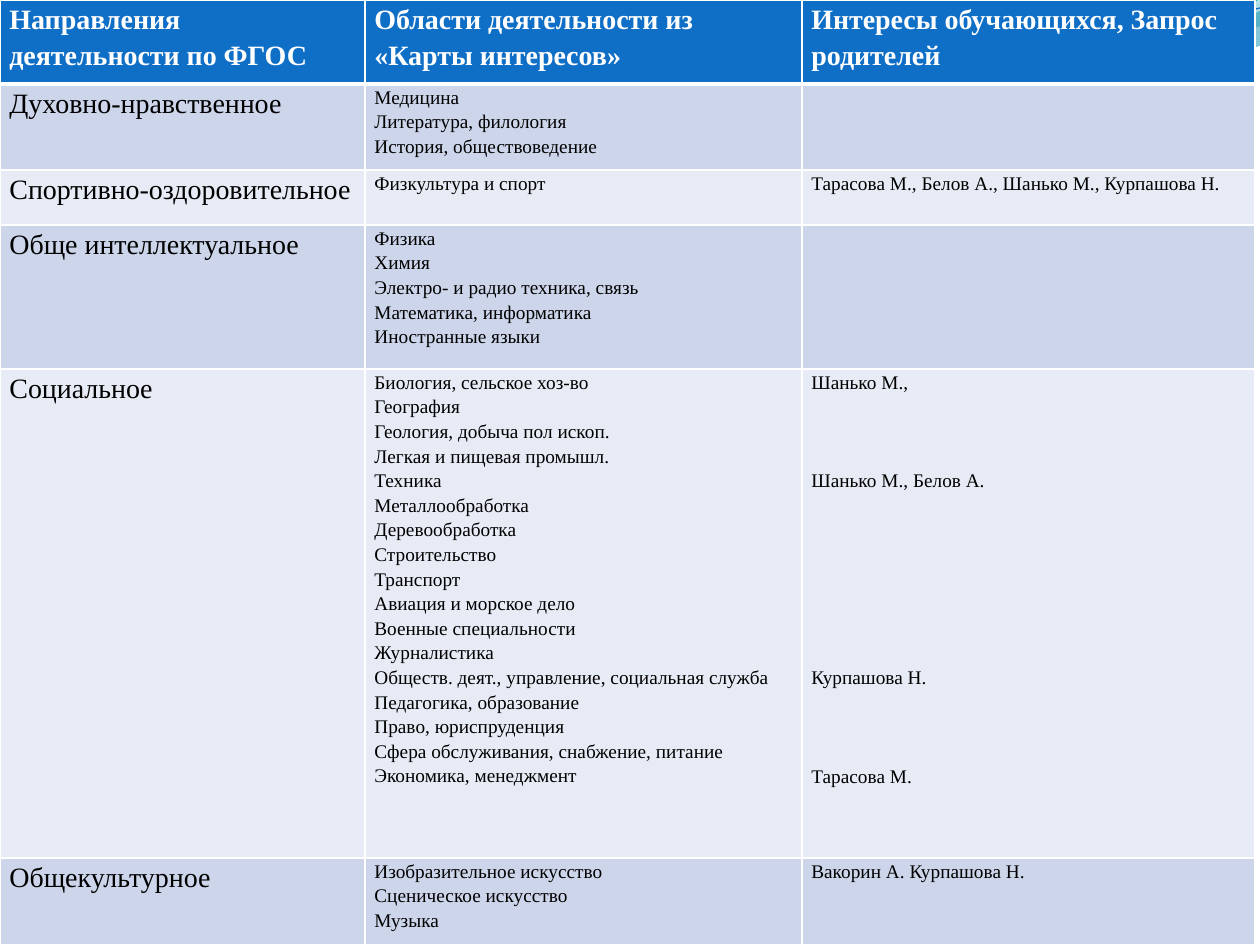
from lxml import etree
from pptx import Presentation
from pptx.dml.color import RGBColor
from pptx.oxml.ns import qn
from pptx.util import Pt

SCALE = 914400 / 126
WIDTH, HEIGHT = 1260, 945
FONT = "Times New Roman"
WHITE, BLACK, BLUE = "FFFFFF", "000000", "0F6FC6"
BANDS = ("CCD5EA", "E7EBF5")
COLUMNS = (365, 437, 453)
ROWS = (84, 86, 55, 144, 489, 87)
SIDE_MARGIN = Pt(5.4)
LINE_PITCH = 14.07

HEADINGS = (
    "Направления деятельности по ФГОС",
    "Области деятельности из «Карты интересов»",
    "Интересы обучающихся, Запрос родителей",
)
DIRECTIONS = (
    ("Духовно-нравственное",
     ("Медицина", "Литература, филология", "История, обществоведение"), {}),
    ("Спортивно-оздоровительное", ("Физкультура и спорт",),
     {0: "Тарасова М., Белов А., Шанько М., Курпашова Н."}),
    ("Обще интеллектуальное",
     ("Физика", "Химия", "Электро- и радио техника, связь",
      "Математика, информатика", "Иностранные языки"), {}),
    ("Социальное",
     ("Биология, сельское хоз-во", "География", "Геология, добыча пол ископ.",
      "Легкая и пищевая промышл.", "Техника", "Металлообработка",
      "Деревообработка", "Строительство", "Транспорт", "Авиация и морское дело",
      "Военные специальности", "Журналистика",
      "Обществ. деят., управление, социальная служба", "Педагогика, образование",
      "Право, юриспруденция", "Сфера обслуживания, снабжение, питание",
      "Экономика, менеджмент"),
     {0: "Шанько М.,", 4: "Шанько М., Белов А.", 12: "Курпашова Н.",
      16: "Тарасова М."}),
    ("Общекультурное",
     ("Изобразительное искусство", "Сценическое искусство", "Музыка"),
     {0: "Вакорин А. Курпашова Н."}),
)

WIDE_WAVE = ((0, 0), (554, 0), (600, 21, 837, 79, 955, 79),
             (1075, 79, 1207, 33, 1260, 11), (1260, 45),
             (1239, 55, 1096, 96, 940, 95), (784, 95, 481, 35, 324, 43),
             (163, 45, 58, 105, 0, 142))
RIGHT_WAVE = ((604, 0), (641, 14, 859, 78, 969, 82),
              (1079, 87, 1211, 40, 1260, 26), (1260, 0))
TEAL_CURVE = ((0, 140), (60, 117, 199, 72, 349, 66),
              (498, 59, 747, 112, 898, 101), (1050, 89, 1182, 19, 1257, 0))
BLUE_CURVE = ((0, 131), (59, 121, 207, 77, 357, 71),
              (508, 64, 752, 106, 903, 95), (1053, 84, 1187, 26, 1260, 8))


def px(length):
    """Turn pixels into EMU."""
    return round(length * SCALE)


def color(value):
    """Turn a hex string into a colour."""
    return RGBColor.from_string(value)


def add_outline(page, segments, closed):
    """Add a freeform of straight lines and cubic curves, without a shadow."""
    points = [segment[i:i + 2] for segment in segments[1:]
              for i in range(0, len(segment), 2)]
    builder = page.shapes.build_freeform(*segments[0], scale=SCALE)
    builder.add_line_segments(points, close=closed)
    shape = builder.convert_to_shape()
    shape.shadow.inherit = False
    lines = iter(list(shape._element.spPr.iter(qn("a:lnTo"))))
    for segment in segments[1:]:
        line = next(lines)
        if len(segment) == 6:
            curve = etree.Element(qn("a:cubicBezTo"))
            line.getparent().replace(line, curve)
            for part in (line, next(lines), next(lines)):
                curve.append(part[0])
                if part.getparent() is not None:
                    part.getparent().remove(part)
    return shape


def add_wave(page, segments, stops):
    """Add a wave with a see-through vertical gradient."""
    wave = add_outline(page, segments, True)
    wave.line.fill.background()
    wave.fill.gradient()
    wave.fill.gradient_angle = 270
    elements = wave._element.spPr.iter(qn("a:gs"))
    for stop, element, (position, value, opacity) in zip(
            wave.fill.gradient_stops, elements, stops):
        stop.position = position
        stop.color.rgb = color(value)
        etree.SubElement(element[0], qn("a:alpha"), val=str(opacity * 1000))


def add_curve(page, segments, value, width):
    """Add an open curved line."""
    curve = add_outline(page, segments, False)
    curve.fill.background()
    curve.line.color.rgb = color(value)
    curve.line.width = Pt(width)


def set_borders(cell, top, bottom):
    """Give a cell white borders."""
    properties = cell._tc.get_or_add_tcPr()
    widths = (("a:lnL", 1), ("a:lnR", 1), ("a:lnT", top), ("a:lnB", bottom))
    for index, (tag, width) in enumerate(widths):
        line = etree.Element(qn(tag), w=str(Pt(width)))
        fill = etree.SubElement(line, qn("a:solidFill"))
        etree.SubElement(fill, qn("a:srgbClr"), val=WHITE)
        properties.insert(index, line)


def fill_cell(cell, lines, size, value, background, bold=False):
    """Write numbered lines in a cell, leaving room for skipped numbers."""
    cell.margin_left = cell.margin_right = SIDE_MARGIN
    cell.margin_top = cell.margin_bottom = 0
    cell.fill.solid()
    cell.fill.fore_color.rgb = color(background)
    cell.text_frame.text = "\n".join(lines.values())
    previous = -1
    for number, paragraph in zip(lines, cell.text_frame.paragraphs):
        paragraph.line_spacing = 1.15
        if number - previous > 1:
            paragraph.space_before = Pt(LINE_PITCH * (number - previous - 1))
        previous = number
        for span in paragraph.runs:
            span.font.name = FONT
            span.font.size = Pt(size)
            span.font.bold = bold
            span.font.color.rgb = color(value)


def add_interest_table(page):
    """Add the table of directions, fields and interests."""
    table = page.shapes.add_table(
        len(ROWS), len(COLUMNS), 0, 0, px(sum(COLUMNS)), px(sum(ROWS))).table
    for column, width in zip(table.columns, COLUMNS):
        column.width = px(width)
    for row, height in zip(table.rows, ROWS):
        row.height = px(height)
    for cell, heading in zip(table.rows[0].cells, HEADINGS):
        fill_cell(cell, {0: heading}, 16, WHITE, BLUE, True)
        set_borders(cell, 1, 3)
    for index, (direction, fields, interests) in enumerate(DIRECTIONS):
        contents = ({0: direction}, dict(enumerate(fields)), interests)
        cells = table.rows[index + 1].cells
        for cell, lines, size in zip(cells, contents, (16, 11, 11)):
            fill_cell(cell, lines, size, BLACK, BANDS[index % 2])
            set_borders(cell, 1 if index else 3, 1)


def main():
    """Build the slide and save it."""
    deck = Presentation()
    deck.slide_width, deck.slide_height = px(WIDTH), px(HEIGHT)
    page = deck.slides.add_slide(deck.slide_layouts[6])
    add_wave(page, WIDE_WAVE, ((0, "0074A1", 45), (1, "00C6CF", 55)))
    add_wave(page, RIGHT_WAVE, ((0, "00A1A9", 30), (0.8, "008BBF", 45)))
    add_curve(page, TEAL_CURVE, "0AB8BF", 0.85)
    add_curve(page, BLUE_CURVE, BLUE, 0.75)
    add_interest_table(page)
    deck.save("out.pptx")


if __name__ == "__main__":
    main()
